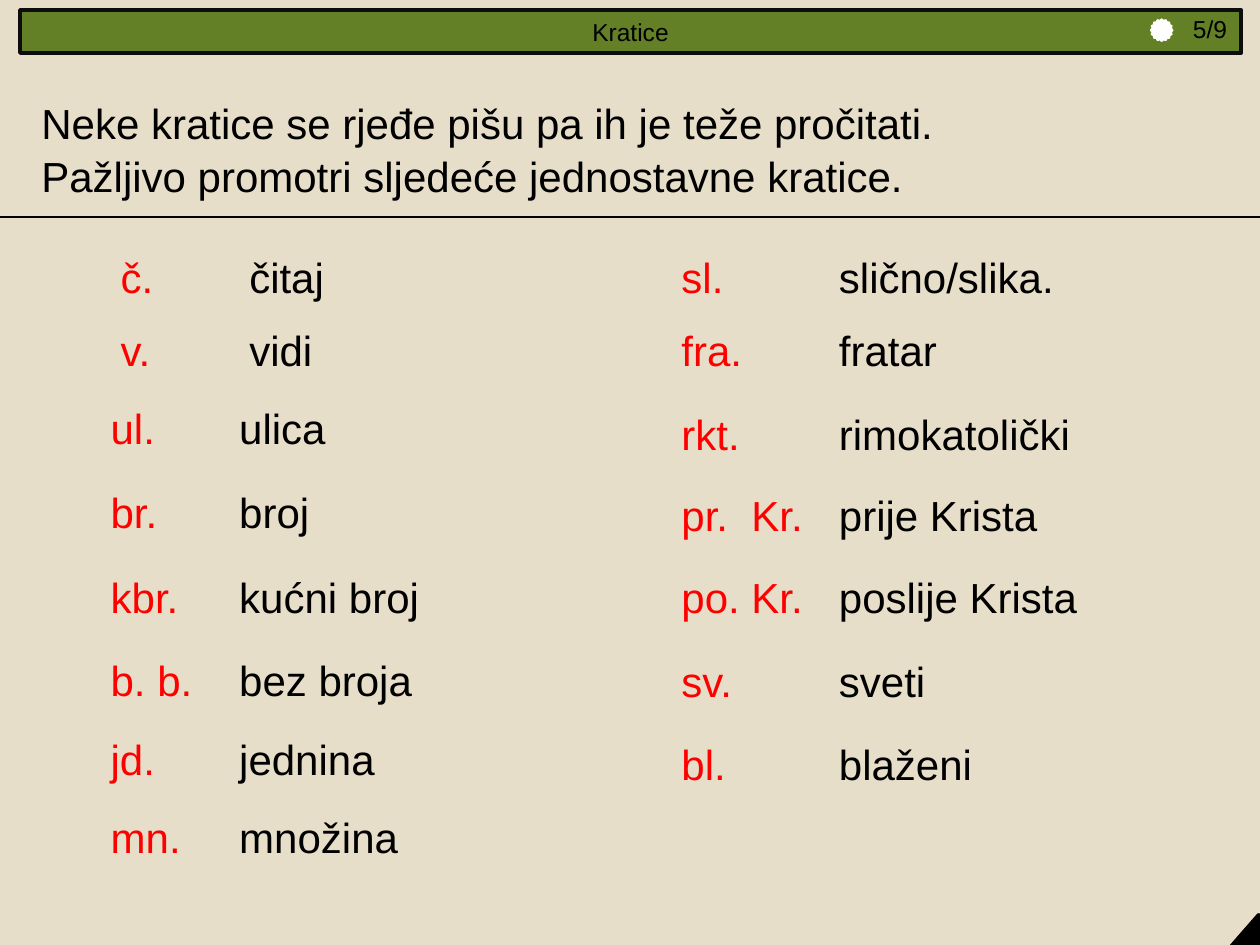
from dataclasses import dataclass

from lxml.etree import SubElement
from pptx import Presentation
from pptx.dml.color import RGBColor
from pptx.enum.shapes import MSO_CONNECTOR as Connector, MSO_SHAPE as Shape
from pptx.enum.text import MSO_ANCHOR as Anchor, MSO_AUTO_SIZE as AutoSize, PP_ALIGN as Align
from pptx.oxml.ns import qn
from pptx.util import Emu, Pt


@dataclass(frozen=True)
class Theme:
    font: str = "Arial"
    small: int = 14
    body: int = 24
    spacing: float = 1.06
    paper: str = "E7DEC9"
    bar: str = "638026"
    edge: str = "0D0D0D"
    ink: str = "000000"
    accent: str = "FF0000"
    light: str = "FFFFFF"


THEME = Theme()
EMU_PER_PX = 9144
PAGE_WIDTH, PAGE_HEIGHT = 1000, 750
ROW_HEIGHT = 51

LEFT_ROWS = [
    (0, 8, "č.", "čitaj"),
    (58, 8, "v.", "vidi"),
    (120, 0, "ul.", "ulica"),
    (187, 0, "br.", "broj"),
    (254, 0, "kbr.", "kućni broj"),
    (320, 0, "b. b.", "bez broja"),
    (383, 0, "jd.", "jednina"),
    (445, 0, "mn.", "množina"),
]
RIGHT_ROWS = [
    (0, 0, "sl.", "slično/slika."),
    (58, 0, "fra.", "fratar"),
    (125, 0, "rkt.", "rimokatolički"),
    (189, 0, "pr.  Kr.", "prije Krista"),
    (254, 0, "po. Kr.", "poslije Krista"),
    (321, 0, "sv.", "sveti"),
    (387, 0, "bl.", "blaženi"),
]


def px(length):
    return Emu(length * EMU_PER_PX)


def rgb(color):
    return RGBColor.from_string(color)


def style_text(para, size, color):
    para.font.name = THEME.font
    para.font.size = Pt(size)
    para.font.bold = False
    para.font.color.rgb = rgb(color)


def style_shape(shape, fill, line, width):
    shape.fill.solid()
    shape.fill.fore_color.rgb = rgb(fill)
    shape.line.color.rgb = rgb(line)
    shape.line.width = Pt(width)


def add_text(page, box, lines, size, color, spacing=None, wrap=True):
    frame = page.shapes.add_textbox(*map(px, box)).text_frame
    frame.word_wrap = wrap
    frame.text = "\n".join(lines)
    for para in frame.paragraphs:
        style_text(para, size, color)
        para.line_spacing = spacing


def add_mark(page, kind, box, color, rotation=0):
    mark = page.shapes.add_shape(kind, *map(px, box))
    mark.shadow.inherit = False
    mark.rotation = rotation
    style_shape(mark, color, color, 2)


def add_header(page, box):
    left, top, width, height = box
    title = page.shapes.title
    title.left, title.top, title.width, title.height = map(px, box)
    style_shape(title, THEME.bar, THEME.edge, 2.25)
    frame = title.text_frame
    frame.text = "Kratice"
    frame.auto_size = AutoSize.NONE
    frame.vertical_anchor = Anchor.MIDDLE
    para = frame.paragraphs[0]
    para.alignment = Align.CENTER
    style_text(para, THEME.small, THEME.ink)
    right = left + width
    add_text(page, (right - 48, top - 2, 47, height), ["5/9"], THEME.small, THEME.ink, wrap=False)
    add_mark(page, Shape.STAR_16_POINT, (right - 71, top + 8, 16, 16), THEME.light)


def add_intro(page, box):
    left, top, width, height = box
    lines = [
        "Neke kratice se rjeđe pišu pa ih je teže pročitati.",
        "Pažljivo promotri sljedeće jednostavne kratice.",
    ]
    add_text(page, box, lines, THEME.body, THEME.ink, THEME.spacing)
    rule_top = px(top + height + 11)
    rule = page.shapes.add_connector(Connector.STRAIGHT, 0, rule_top, px(PAGE_WIDTH), rule_top)
    rule.line.color.rgb = rgb(THEME.ink)
    rule.line.width = Pt(1)
    SubElement(rule._element.spPr, qn("a:effectLst"))


def add_glossary(page, box, term_width, rows):
    left, top, width, height = box
    for offset, indent, term, meaning in rows:
        columns = [
            (left, term_width, term, THEME.accent),
            (left + term_width, width - term_width, meaning, THEME.ink),
        ]
        for column, column_width, text, color in columns:
            cell = (column + indent, top + offset, column_width, ROW_HEIGHT)
            add_text(page, cell, [text], THEME.body, color, THEME.spacing)


def main():
    deck = Presentation()
    deck.slide_width, deck.slide_height = px(PAGE_WIDTH), px(PAGE_HEIGHT)
    page = deck.slides.add_slide(deck.slide_layouts[5])
    page.background.fill.solid()
    page.background.fill.fore_color.rgb = rgb(THEME.paper)
    add_header(page, (16, 8, 969, 34))
    add_intro(page, (23, 70, 953, 91))
    add_glossary(page, (78, 192, 297, 496), 102, LEFT_ROWS)
    add_glossary(page, (531, 192, 437, 438), 125, RIGHT_ROWS)
    add_mark(page, Shape.RIGHT_TRIANGLE, (976, 727, 24, 23), THEME.ink, 267.4)
    deck.save("out.pptx")


if __name__ == "__main__":
    main()
